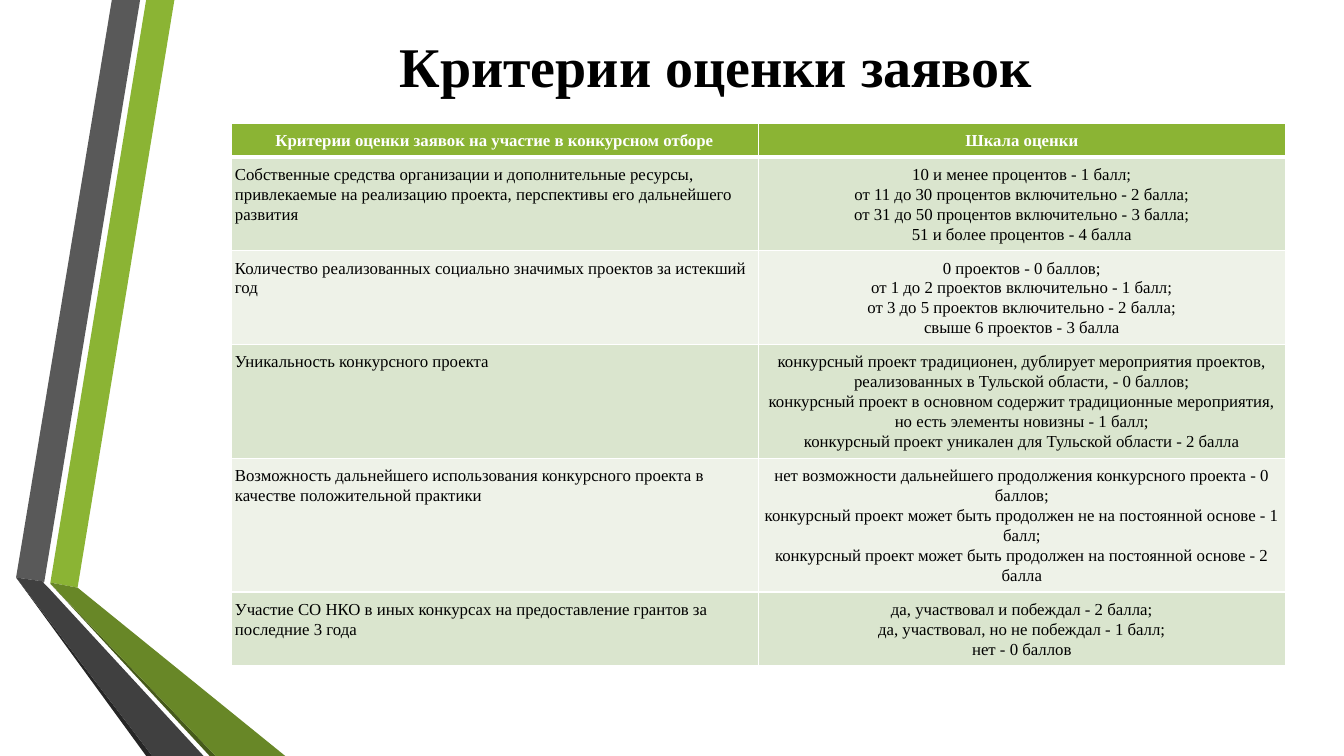
import pptx
import pptx.util
import pptx.dml.color
import pptx.enum.text
import pptx.oxml.ns
import lxml.etree

PX = 9144
RGB = pptx.dml.color.RGBColor
ALIGN = pptx.enum.text.PP_ALIGN
ANCHOR = pptx.enum.text.MSO_ANCHOR
FONT = "Times New Roman"

BLACK = RGB(0x00, 0x00, 0x00)
WHITE = RGB(0xFF, 0xFF, 0xFF)
LIME = RGB(0x8B, 0xB4, 0x34)
LEAF = RGB(0x68, 0x87, 0x27)
MOSS = RGB(0x46, 0x5A, 0x1A)
GREY = RGB(0x59, 0x59, 0x59)
DARK = RGB(0x40, 0x40, 0x40)
COAL = RGB(0x26, 0x26, 0x26)
BANDS = (RGB(0xDA, 0xE5, 0xCE), RGB(0xEE, 0xF2, 0xE8))

RIBBONS = [
    (LIME, [(50, 578), (77, 583), (173, 0), (145, 0)]),
    (GREY, [(139, 0), (111, 0), (16, 573), (44, 577)]),
    (COAL, [(16, 573), (145, 750), (151, 750)]),
    (MOSS, [(50, 579), (208, 750), (214, 750)]),
    (LEAF, [(50, 579), (214, 750), (283, 750), (77, 583), (50, 578)]),
    (DARK, [(202, 750), (48, 583), (43, 578), (44, 577), (16, 573), (151, 750)]),
]

HEAD = ("Критерии оценки заявок на участие в конкурсном отборе", "Шкала оценки")
ROWS = [
    (93, "Собственные средства организации и дополнительные ресурсы, "
         "привлекаемые на реализацию проекта, перспективы его дальнейшего развития",
     ["10 и менее процентов - 1 балл;",
      "от 11 до 30 процентов включительно - 2 балла;",
      "от 31 до 50 процентов включительно - 3 балла;",
      "51 и более процентов - 4 балла"]),
    (93, "Количество реализованных социально значимых проектов за истекший год",
     ["0 проектов - 0 баллов;",
      "от 1 до 2 проектов включительно - 1 балл;",
      "от 3 до 5 проектов включительно - 2 балла;",
      "свыше 6 проектов - 3 балла"]),
    (113, "Уникальность конкурсного проекта",
     ["конкурсный проект традиционен, дублирует мероприятия проектов, "
      "реализованных в Тульской области, - 0 баллов;",
      "конкурсный проект в основном содержит традиционные мероприятия, "
      "но есть элементы новизны - 1 балл;",
      "конкурсный проект уникален для Тульской области - 2 балла"]),
    (113, "Возможность дальнейшего использования конкурсного проекта "
          "в качестве положительной практики",
     ["нет возможности дальнейшего продолжения конкурсного проекта - 0 баллов;",
      "конкурсный проект может быть продолжен не на постоянной основе - 1 балл;",
      "конкурсный проект может быть продолжен на постоянной основе - 2 балла"]),
    (73, "Участие СО НКО в иных конкурсах на предоставление грантов за последние 3 года",
     ["да, участвовал и побеждал - 2 балла;",
      "да, участвовал, но не побеждал - 1 балл;",
      "нет - 0 баллов"]),
]


def px(size):
    return pptx.util.Emu(size * PX)


def write(frame, lines, size=12, color=BLACK, bold=False, align=ALIGN.CENTER, space=None):
    for num, line in enumerate(lines):
        para = frame.add_paragraph() if num else frame.paragraphs[0]
        para.alignment = align
        para.line_spacing = space
        run = para.add_run()
        run.text = line
        run.font.name = FONT
        run.font.size = pptx.util.Pt(size)
        run.font.bold = bold
        run.font.color.rgb = color


def ribbon(slide, color, points):
    maker = slide.shapes.build_freeform(*points[0], scale=PX)
    maker.add_line_segments(points[1:], close=True)
    shape = maker.convert_to_shape()
    shape.shadow.inherit = False
    shape.fill.solid()
    shape.fill.fore_color.rgb = color
    shape.line.fill.background()


def border(cell, side, width):
    name = pptx.oxml.ns.qn
    props = cell._tc.get_or_add_tcPr()
    line = lxml.etree.SubElement(props, name("a:ln" + side), w=str(pptx.util.Pt(width)))
    fill = lxml.etree.SubElement(line, name("a:solidFill"))
    lxml.etree.SubElement(fill, name("a:srgbClr"), val=str(WHITE))


def style(cell, color, top=1, bottom=1):
    for side, width in (("L", 1), ("R", 1), ("T", top), ("B", bottom)):
        border(cell, side, width)
    cell.fill.solid()
    cell.fill.fore_color.rgb = color
    cell.margin_left = cell.margin_right = px(4)
    cell.margin_top = cell.margin_bottom = px(7)


def headline(slide, text):
    title = slide.shapes.title
    title.left, title.top, title.width, title.height = map(px, (162, 22, 1096, 85))
    title.text_frame.auto_size = pptx.enum.text.MSO_AUTO_SIZE.NONE
    title.text_frame.vertical_anchor = ANCHOR.MIDDLE
    write(title.text_frame, [text], size=40, bold=True)


def grid(slide):
    area = map(px, (229, 122, 1046, 518))
    table = slide.shapes.add_table(len(ROWS) + 1, 2, *area).table
    table.horz_banding = False
    table.rows[0].height = px(33)
    for col, text in enumerate(HEAD):
        cell = table.cell(0, col)
        style(cell, LIME, bottom=3)
        write(cell.text_frame, [text], color=WHITE, bold=True, space=1.07)
    for row, (height, topic, scale) in enumerate(ROWS, 1):
        table.rows[row].height = px(height)
        for col, lines in enumerate(([topic], scale)):
            cell = table.cell(row, col)
            style(cell, BANDS[(row - 1) % 2], top=3 if row == 1 else 1)
            align = ALIGN.CENTER if col else ALIGN.LEFT
            write(cell.text_frame, lines, align=align, space=1.07)


def main():
    deck = pptx.Presentation()
    deck.slide_width, deck.slide_height = px(1333), px(750)
    slide = deck.slides.add_slide(deck.slide_layouts[5])
    for color, points in RIBBONS:
        ribbon(slide, color, points)
    headline(slide, "Критерии оценки заявок")
    grid(slide)
    deck.save("out.pptx")


if __name__ == "__main__":
    main()
